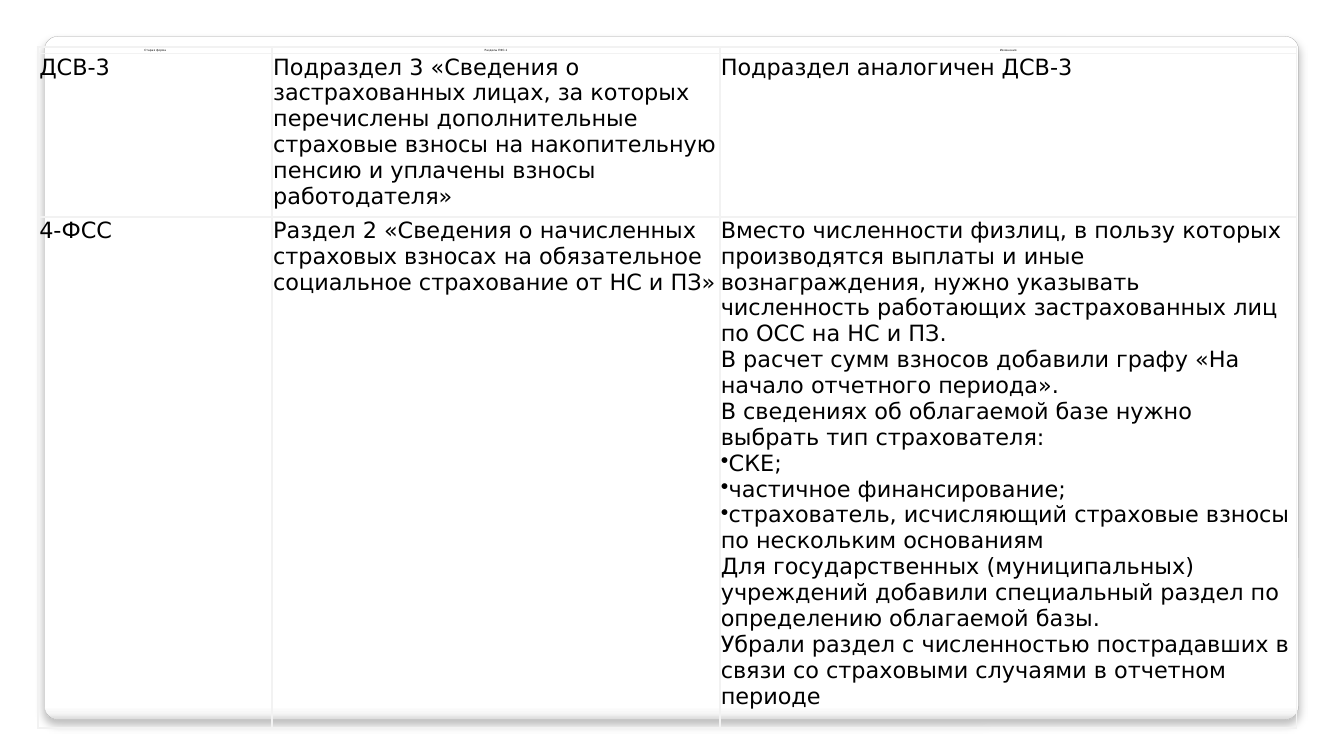
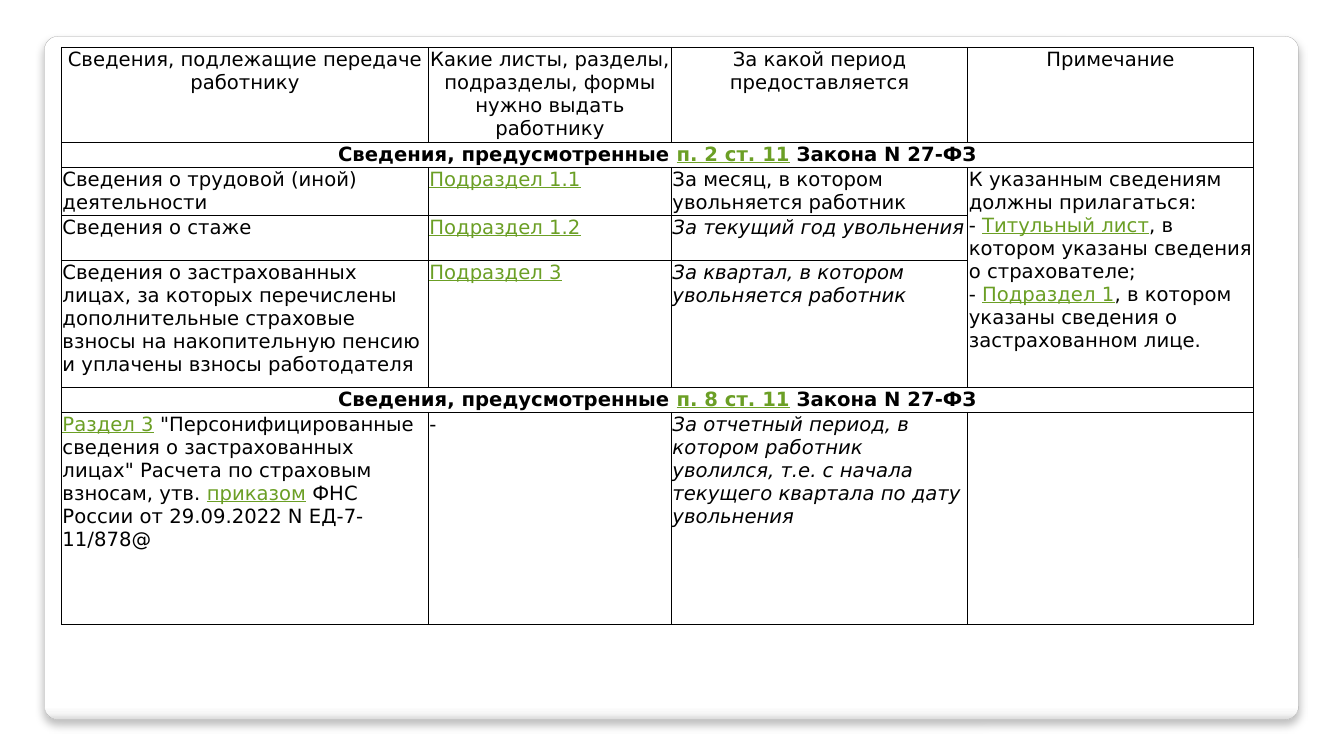
from dataclasses import dataclass
from typing import Optional

import pptx
import pptx.dml.color
import pptx.enum.shapes
import pptx.enum.text
import pptx.oxml
import pptx.oxml.ns
import pptx.presentation
import pptx.slide
import pptx.table
import pptx.text.text
import pptx.util

Inches = pptx.util.Inches
Pt = pptx.util.Pt
SPACE = 'xmlns:a="http://schemas.openxmlformats.org/drawingml/2006/main"'


@dataclass(frozen=True)
class Theme:
    face: str = "DejaVu Sans"
    ink: str = "000000"
    link: str = "6B9F25"
    paper: str = "FFFFFF"
    pale: str = "F2F2F2"
    edge: str = "A4A4A4"
    fade: tuple[tuple[int, str], ...] = (
        (0, "FFFFFF"), (98, "FFFFFF"), (99, "F7F7F7"), (100, "DADADA"))
    tiny: float = 2
    body: float = 14
    large: float = 16
    inset: float = 0.01


THEME = Theme()


@dataclass(frozen=True)
class Cell:
    lines: tuple[str, ...] = ()
    center: bool = False
    bold: bool = False
    italic: bool = False
    size: Optional[float] = None
    span: tuple[int, int] = (1, 1)


@dataclass(frozen=True)
class Grid:
    left: float
    top: float
    cols: tuple[float, ...]
    rows: tuple[float, ...]
    cells: tuple[tuple[Optional[Cell], ...], ...]
    size: float
    border: str
    weight: float
    fill: Optional[str] = None


def text(*lines: str) -> Cell:
    return Cell(lines)


def head(line: str, size: Optional[float] = None) -> Cell:
    return Cell((line,), center=True, size=size)


def term(line: str) -> Cell:
    return Cell((line,), italic=True)


def band(point: str) -> tuple[Optional[Cell], ...]:
    line = f"Сведения, предусмотренные |{point}| Закона N 27-ФЗ"
    return Cell((line,), center=True, bold=True, span=(1, 4)), None, None, None


FORMS = Grid(
    left=0.38, top=0.47, cols=(2.32, 4.44, 5.72), rows=(0.06, 1.62, 5.07),
    size=THEME.large, border=THEME.pale, weight=1.5,
    cells=(
        tuple(head(name, THEME.tiny)
              for name in ("Старая форма", "Разделы ЕФС-1", "Изменения")),
        (
            text("ДСВ-3"),
            text("Подраздел 3 «Сведения о застрахованных лицах, за которых "
                 "перечислены дополнительные страховые взносы на накопительную "
                 "пенсию и уплачены взносы работодателя»"),
            text("Подраздел аналогичен ДСВ-3"),
        ),
        (
            text("4-ФСС"),
            text("Раздел 2 «Сведения о начисленных страховых взносах "
                 "на обязательное социальное страхование от НС и ПЗ»"),
            text(
                "Вместо численности физлиц, в пользу которых производятся "
                "выплаты и иные вознаграждения, нужно указывать численность "
                "работающих застрахованных лиц по ОСС на НС и ПЗ.",
                "В расчет сумм взносов добавили графу "
                "«На начало отчетного периода».",
                "В сведениях об облагаемой базе нужно выбрать тип страхователя:",
                "•СКЕ;",
                "•частичное финансирование;",
                "•страхователь, исчисляющий страховые взносы "
                "по нескольким основаниям",
                "Для государственных (муниципальных) учреждений добавили "
                "специальный раздел по определению облагаемой базы.",
                "Убрали раздел с численностью пострадавших в связи "
                "со страховыми случаями в отчетном периоде",
            ),
        ),
    ),
)

LEAVE = Grid(
    left=0.61, top=0.47, cols=(3.64, 2.41, 2.94, 2.83),
    rows=(0.94, 0.25, 0.48, 0.44, 1.26, 0.25, 2.11),
    size=THEME.body, border=THEME.ink, weight=0.75, fill=THEME.paper,
    cells=(
        tuple(head(name) for name in (
            "Сведения, подлежащие передаче работнику",
            "Какие листы, разделы, подразделы, формы нужно выдать работнику",
            "За какой период предоставляется",
            "Примечание")),
        band("п. 2 ст. 11"),
        (
            text("Сведения о трудовой (иной) деятельности"),
            text("|Подраздел 1.1|"),
            text("За месяц, в котором увольняется работник"),
            Cell((
                "К указанным сведениям должны прилагаться:",
                "- |Титульный лист|, в котором указаны сведения о страхователе;",
                "- |Подраздел 1|, в котором указаны сведения "
                "о застрахованном лице.",
            ), span=(3, 1)),
        ),
        (
            text("Сведения о стаже"),
            text("|Подраздел 1.2|"),
            term("За текущий год увольнения"),
            None,
        ),
        (
            text("Сведения о застрахованных лицах, за которых перечислены "
                 "дополнительные страховые взносы на накопительную пенсию "
                 "и уплачены взносы работодателя"),
            text("|Подраздел 3|"),
            term("За квартал, в котором увольняется работник"),
            None,
        ),
        band("п. 8 ст. 11"),
        (
            text("|Раздел 3| \"Персонифицированные сведения о застрахованных "
                 "лицах\" Расчета по страховым взносам, утв. |приказом| ФНС "
                 "России от 29.09.2022 N ЕД-7-11/878@"),
            text("-"),
            term("За отчетный период, в котором работник уволился, т.е. "
                 "с начала текущего квартала по дату увольнения"),
            Cell(),
        ),
    ),
)


def tint(code: str) -> pptx.dml.color.RGBColor:
    return pptx.dml.color.RGBColor.from_string(code)


def frame(deck: pptx.presentation.Presentation,
          layout: pptx.slide.SlideLayout) -> None:
    slide = deck.slides[0]
    panel = slide.shapes.add_shape(
        pptx.enum.shapes.MSO_SHAPE.ROUNDED_RECTANGLE,
        Inches(0.44), Inches(0.36), Inches(12.44), Inches(6.78))
    panel.adjustments[0] = 0.02
    panel.line.color.rgb = tint(THEME.edge)
    panel.line.width = Pt(0.16)
    panel.fill.gradient()
    panel.fill.gradient_angle = 270
    stops = panel.element.spPr.find(".//" + pptx.oxml.ns.qn("a:gsLst"))
    for stop in list(stops):
        stops.remove(stop)
    for place, code in THEME.fade:
        stops.append(pptx.oxml.parse_xml(
            f'<a:gs {SPACE} pos="{place * 1000}"><a:srgbClr val="{code}"/></a:gs>'))
    panel.shadow.inherit = False
    panel.element.spPr.find(pptx.oxml.ns.qn("a:effectLst")).append(
        pptx.oxml.parse_xml(
            f'<a:outerShdw {SPACE} blurRad="{Pt(6)}" dist="{Pt(4)}" dir="5400000" '
            f'algn="t" rotWithShape="0"><a:srgbClr val="{THEME.ink}">'
            '<a:alpha val="25000"/></a:srgbClr></a:outerShdw>'))
    layout.shapes.element.insert(2, panel.element)


def style(box: pptx.table._Cell, grid: Grid) -> None:
    inset = Inches(THEME.inset)
    box.margin_left = box.margin_right = inset
    box.margin_top = box.margin_bottom = inset
    if grid.fill:
        box.fill.solid()
        box.fill.fore_color.rgb = tint(grid.fill)
    else:
        box.fill.background()
    props = box._tc.get_or_add_tcPr()
    for index, side in enumerate("LRTB"):
        props.insert(index, pptx.oxml.parse_xml(
            f'<a:ln{side} {SPACE} w="{Pt(grid.weight)}"><a:solidFill>'
            f'<a:srgbClr val="{grid.border}"/></a:solidFill></a:ln{side}>'))


def write(para: pptx.text.text._Paragraph, line: str,
          cell: Cell, size: float) -> None:
    font = para.font
    font.name, font.size = THEME.face, Pt(size)
    font.bold, font.italic = cell.bold, cell.italic
    font.color.rgb = tint(THEME.ink)
    if cell.center:
        para.alignment = pptx.enum.text.PP_ALIGN.CENTER
    if line.startswith("•"):
        props = para._p.get_or_add_pPr()
        props.set("marL", "0")
        props.set("indent", "0")
        props.insert(0, pptx.oxml.parse_xml(f'<a:buChar {SPACE} char="•"/>'))
        line = line[1:]
    for index, part in enumerate(line.split("|")):
        if part:
            run = para.add_run()
            run.text = part
            if index % 2:
                run.font.underline = True
                run.font.color.rgb = tint(THEME.link)


def draw(slide: pptx.slide.Slide, grid: Grid) -> None:
    table = slide.shapes.add_table(
        len(grid.rows), len(grid.cols), Inches(grid.left), Inches(grid.top),
        Inches(sum(grid.cols)), Inches(sum(grid.rows))).table
    table.first_row = table.horz_banding = False
    for col, width in zip(table.columns, grid.cols):
        col.width = Inches(width)
    for row, height in zip(table.rows, grid.rows):
        row.height = Inches(height)
    for y, row in enumerate(grid.cells):
        for x, item in enumerate(row):
            box = table.cell(y, x)
            style(box, grid)
            cell = item or Cell()
            size = cell.size or grid.size
            for index, line in enumerate(cell.lines or ("",)):
                body = box.text_frame
                para = body.add_paragraph() if index else body.paragraphs[0]
                write(para, line, cell, size)
            if cell.span != (1, 1):
                down, over = cell.span
                box.merge(table.cell(y + down - 1, x + over - 1))


def main() -> None:
    deck = pptx.Presentation()
    deck.slide_width, deck.slide_height = Inches(13.33), Inches(7.5)
    layout = deck.slide_layouts[6]
    for grid in (FORMS, LEAVE):
        draw(deck.slides.add_slide(layout), grid)
    frame(deck, layout)
    deck.save("out.pptx")


if __name__ == "__main__":
    main()
